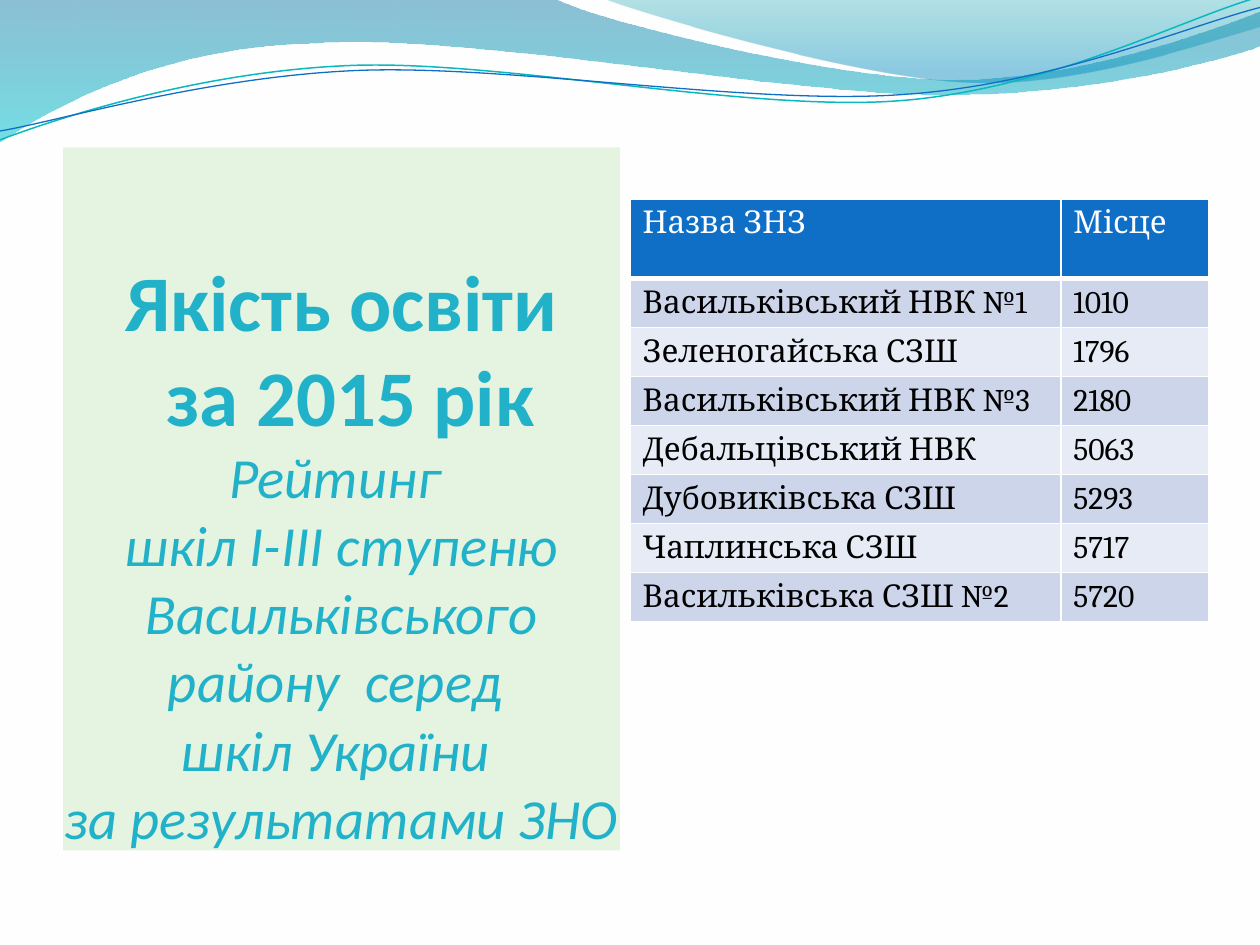
import math
from copy import deepcopy

from lxml import etree
from pptx import Presentation
from pptx import util as u
from pptx.dml.color import RGBColor
from pptx.enum import text
from pptx.oxml import ns

COLORS = {
    "paper": "FFFEFF", "title_fill": "E5F4E0", "title": "21B2C9",
    "header": "0F6FC6", "band_dark": "CCD5EA", "band_light": "E7EBF5",
    "ink": "000000", "teal_line": "0AB8BF", "blue_line": "0F6FC6",
    "deep_blue": "0074A1", "aqua": "00C6CF", "sea": "00A1A9", "sky": "008BBF",
}

HEADINGS = ["Якість освіти", " за 2015 рік"]
SUBTITLE = ["Рейтинг ", "шкіл І-ІІІ ступеню Васильківського району  серед ",
            "шкіл України ", "за результатами ЗНО"]

RATING = [
    ("Назва ЗНЗ", "Місце"),
    ("Васильківський НВК №1", "1010"),
    ("Зеленогайська СЗШ", "1796"),
    ("Васильківський НВК №3", "2180"),
    ("Дебальцівський НВК", "5063"),
    ("Дубовиківська СЗШ", "5293"),
    ("Чаплинська СЗШ", "5717"),
    ("Васильківська СЗШ №2", "5720"),
]

BROAD_WAVE = [
    [(0, 0)],
    [(4.4, -0.01)],
    [(4.76, 0.17), (6.64, 0.63), (7.58, 0.63)],
    [(8.53, 0.63), (9.58, 0.26), (10, 0.09)],
    [(10.01, 0.36)],
    [(9.83, 0.44), (8.7, 0.76), (7.46, 0.75)],
    [(6.22, 0.75), (3.82, 0.28), (2.57, 0.34)],
    [(1.29, 0.36), (0.46, 0.83), (-0.01, 1.13)],
    [(0, 0)],
]
RIGHT_WAVE = [
    [(4.79, -0.01)],
    [(5.09, 0.11), (6.82, 0.62), (7.69, 0.65)],
    [(8.56, 0.69), (9.61, 0.32), (10, 0.21)],
    [(10, 0)],
    [(4.79, -0.01)],
]
TEAL_CURVE = [
    [(0, 1.11)],
    [(0.48, 0.93), (1.58, 0.57), (2.77, 0.52)],
    [(3.95, 0.47), (5.93, 0.89), (7.13, 0.8)],
    [(8.33, 0.71), (9.38, 0.15), (9.98, -0.02)],
]
BLUE_CURVE = [
    [(0, 1.04)],
    [(0.47, 0.96), (1.64, 0.61), (2.83, 0.56)],
    [(4.03, 0.51), (5.97, 0.84), (7.17, 0.75)],
    [(8.36, 0.67), (9.41, 0.21), (10, 0.06)],
]
CURVE_TILT = -2.7


def rgb(name):
    """Return the named colour."""
    return RGBColor.from_string(COLORS[name])


def turn(segments, degrees, center):
    """Rotate every point of the segments clockwise about the center."""
    cos, sin = math.cos(math.radians(degrees)), math.sin(math.radians(degrees))
    cx, cy = center
    return [[(cx + (x - cx) * cos - (y - cy) * sin, cy + (x - cx) * sin + (y - cy) * cos)
             for x, y in segment] for segment in segments]


def add_outline(slide, box, segments, close):
    """Draw lines and cubic curves measured in inches from the box corner."""
    left, top = box
    start, *rest = [(left + u.Inches(x), top + u.Inches(y))
                    for segment in segments for x, y in segment]
    builder = slide.shapes.build_freeform(*start)
    builder.add_line_segments(rest, close=close)
    outline = builder.convert_to_shape()
    outline.shadow.inherit = False
    lines = iter(outline.element.spPr.findall(".//" + ns.qn("a:lnTo")))
    for segment in segments[1:]:
        knots = [next(lines) for point in segment]
        if len(knots) == 3:
            cubic = etree.Element(ns.qn("a:cubicBezTo"))
            knots[0].addprevious(cubic)
            for knot in knots:
                cubic.append(knot[0])
                knot.getparent().remove(knot)
    return outline


def add_wave(slide, box, segments, stops):
    """Add a wave with a translucent vertical gradient."""
    wave = add_outline(slide, box, segments, True)
    wave.line.fill.background()
    wave.fill.gradient()
    wave.fill.gradient_angle = 270
    for stop, (position, color, opacity) in zip(wave.fill.gradient_stops, stops):
        stop.position = position
        stop.color.rgb = rgb(color)
    tints = wave.element.spPr.findall(".//" + ns.qn("a:gs") + "/" + ns.qn("a:srgbClr"))
    for tint, (position, color, opacity) in zip(tints, stops):
        etree.SubElement(tint, ns.qn("a:alpha"), val=str(opacity * 1000))


def add_curve(slide, box, segments, center, color, width):
    """Add a thin, slightly tilted open curve."""
    curve = add_outline(slide, box, turn(segments, -CURVE_TILT, center), False)
    curve.rotation = CURVE_TILT
    curve.fill.background()
    curve.line.color.rgb = rgb(color)
    curve.line.width = u.Pt(width)


def add_header_waves(slide, box):
    """Add the waves and curves along the top edge."""
    add_wave(slide, box, BROAD_WAVE, [(0, "deep_blue", 45), (1, "aqua", 55)])
    add_wave(slide, box, RIGHT_WAVE, [(0, "sea", 30), (0.8, "sky", 45)])
    add_curve(slide, box, TEAL_CURVE, (4.99, 0.58), "teal_line", 0.85)
    add_curve(slide, box, BLUE_CURVE, (5, 0.59), "blue_line", 0.75)


def fill_title(slide, box):
    """Place and format the title panel."""
    title = slide.shapes.title
    title.left, title.top, title.width, title.height = box
    title.fill.solid()
    title.fill.fore_color.rgb = rgb("title_fill")
    frame = title.text_frame
    frame.text = "\v".join(HEADINGS + SUBTITLE)
    frame.word_wrap = True
    frame.auto_size = text.MSO_AUTO_SIZE.NONE
    frame.vertical_anchor = text.MSO_ANCHOR.BOTTOM
    frame.margin_left = frame.margin_right = frame.margin_bottom = 0
    frame.margin_top = u.Inches(0.05)
    paragraph = frame.paragraphs[0]
    paragraph.alignment = text.PP_ALIGN.CENTER
    for index, run in enumerate(paragraph.runs):
        heading = index < len(HEADINGS)
        run.font.name = "Calibri"
        run.font.size = u.Pt(45 if heading else 32.4)
        run.font.bold = heading
        run.font.italic = not heading
        run.font.color.rgb = rgb("title")
    for run, line_break in zip(paragraph.runs, paragraph._p.findall(ns.qn("a:br"))):
        line_break.insert(0, deepcopy(run.font._element))


def add_borders(cell, bottom):
    """Give a cell thin borders and a bottom border of its own width."""
    edges = {"a:lnL": 1, "a:lnR": 1, "a:lnT": 1, "a:lnB": bottom}
    for position, (edge, width) in enumerate(edges.items()):
        border = etree.Element(ns.qn(edge), w=str(u.Pt(width)))
        paint = etree.SubElement(border, ns.qn("a:solidFill"))
        etree.SubElement(paint, ns.qn("a:srgbClr"), val=COLORS["paper"])
        cell._tc.get_or_add_tcPr().insert(position, border)


def add_rating(slide, box):
    """Add the table of schools and their places."""
    table = slide.shapes.add_table(len(RATING), 2, *box).table
    for column, width in zip(table.columns, (3.42, 1.17)):
        column.width = u.Inches(width)
    for index, (row, values) in enumerate(zip(table.rows, RATING)):
        row.height = u.Inches(0.36 if index else 0.63)
        band = ("band_dark" if index % 2 else "band_light") if index else "header"
        for cell, value in zip(row.cells, values):
            cell.fill.solid()
            cell.fill.fore_color.rgb = rgb(band)
            add_borders(cell, 1 if index else 3)
            cell.text_frame.text = value
            font = cell.text_frame.paragraphs[0].runs[0].font
            font.name = "Cambria"
            font.size = u.Pt(18)
            font.bold = False
            font.color.rgb = rgb("ink" if index else "paper")


def main():
    """Build and save the slide."""
    deck = Presentation()
    deck.slide_width, deck.slide_height = u.Inches(10), u.Inches(7.5)
    slide = deck.slides.add_slide(deck.slide_layouts[5])
    slide.background.fill.solid()
    slide.background.fill.fore_color.rgb = rgb("paper")
    add_header_waves(slide, (u.Inches(0), u.Inches(0)))
    fill_title(slide, [u.Inches(n) for n in (0.5, 1.17, 4.42, 5.58)])
    add_rating(slide, [u.Inches(n) for n in (5, 1.58, 4.58, 3.43)])
    deck.save("out.pptx")


if __name__ == "__main__":
    main()
